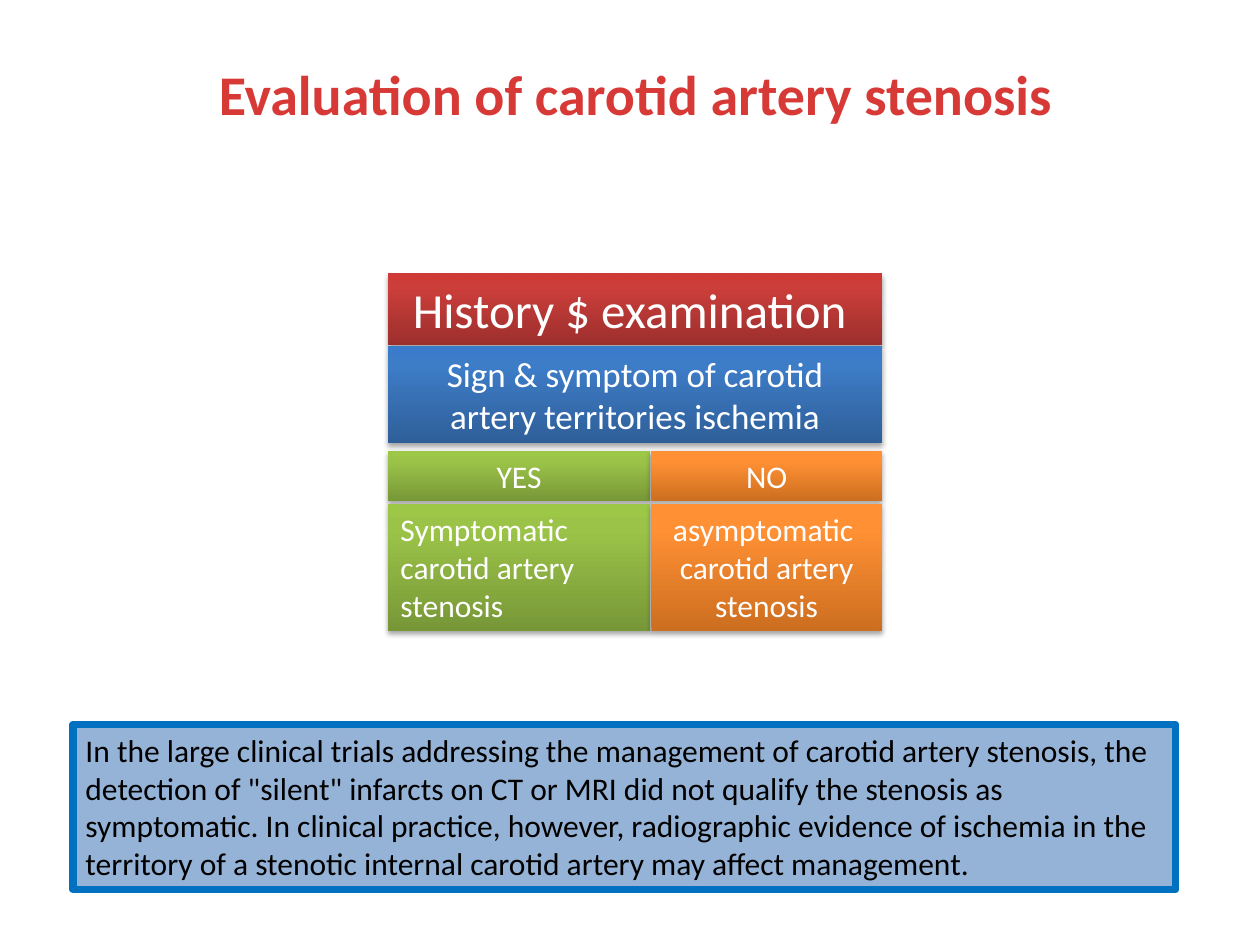
from copy import deepcopy

from lxml.etree import SubElement
from pptx import Presentation
from pptx.dml.color import RGBColor
from pptx.enum.shapes import MSO_SHAPE as Shape
from pptx.enum.text import MSO_ANCHOR as Anchor, PP_ALIGN as Align
from pptx.oxml.ns import qn
from pptx.util import Inches, Pt

WHITE = RGBColor(0xFF, 0xFF, 0xFF)
BLACK = RGBColor(0, 0, 0)
TITLE_RED = RGBColor(0xD7, 0x3A, 0x36)
NOTE_FILL = RGBColor(0x95, 0xB3, 0xD7)
NOTE_LINE = RGBColor(0x00, 0x70, 0xC0)

STOPS = (0, 0.8, 1)
RED = [RGBColor.from_string(c) for c in ("9C2F2D", "CB3E3A", "CE3B37")]
BLUE = [RGBColor.from_string(c) for c in ("2F5F99", "3D7CC7", "3A7CCB")]
GREEN = [RGBColor.from_string(c) for c in ("779737", "9BC348", "9DC746")]
ORANGE = [RGBColor.from_string(c) for c in ("CC6E20", "FF9034", "FF9136")]

NOTE = (
    "In the large clinical trials addressing the management of carotid artery "
    'stenosis, the detection of "silent" infarcts on CT or MRI did not qualify '
    "the stenosis as symptomatic. In clinical practice, however, radiographic "
    "evidence of ischemia in the territory of a stenotic internal carotid artery "
    "may affect management."
)


def write_text(shape, text, color, align=Align.CENTER, **font_format):
    frame = shape.text_frame
    frame.word_wrap = True
    frame.vertical_anchor = Anchor.TOP
    para = frame.paragraphs[0]
    para.alignment = align
    span = para.add_run()
    span.text = text
    span.font.color.rgb = color
    for name, value in {"name": "Calibri", **font_format}.items():
        setattr(span.font, name, value)


def add_box(page, left, top, width, height):
    box = page.shapes.add_shape(
        Shape.RECTANGLE, Inches(left), Inches(top), Inches(width), Inches(height))
    box.shadow.inherit = False
    return box


def fill_gradient(box, colors):
    """Fill from bottom to top with three colors."""
    box.fill.gradient()
    box.fill.gradient_angle = 90
    stop_list = box.fill._xPr.find(".//" + qn("a:gsLst"))
    stop_list.append(deepcopy(stop_list[0]))
    for stop, position, color in zip(box.fill.gradient_stops, STOPS, colors):
        stop.position = position
        stop.color.rgb = color


def add_soft_shadow(box):
    effects = box._element.spPr.find(qn("a:effectLst"))
    shadow = SubElement(effects, qn("a:outerShdw"), blurRad=str(Pt(3.1)),
                        dist=str(Pt(1.8)), dir="5400000", rotWithShape="0")
    black = SubElement(shadow, qn("a:srgbClr"), val="000000")
    SubElement(black, qn("a:alpha"), val="35000")


def add_title(page, left, top, width, height):
    title = page.shapes.add_textbox(
        Inches(left), Inches(top), Inches(width), Inches(height))
    write_text(title, "Evaluation of carotid artery stenosis", TITLE_RED,
               size=Pt(32), bold=True)


def add_decision_chart(page, left, top, width):
    """Stack the two steps, then the YES and NO columns side by side."""
    yes_width = 2.08
    no_left, no_width = yes_width + 0.01, width - yes_width - 0.01
    cells = [
        (0, 0, width, 0.57, RED, "History $ examination ", 28, Align.CENTER),
        (0, 0.58, width, 0.77, BLUE,
         "Sign & symptom of carotid artery territories ischemia", 20, Align.CENTER),
        (0, 1.41, yes_width, 0.4, GREEN, "YES", 18, Align.CENTER),
        (no_left, 1.41, no_width, 0.4, ORANGE, "NO", 18, Align.CENTER),
        (0, 1.83, yes_width, 1.01, GREEN,
         "Symptomatic  carotid artery stenosis", 18, Align.LEFT),
        (no_left, 1.83, no_width, 1.01, ORANGE,
         "asymptomatic  carotid artery stenosis", 18, Align.CENTER),
    ]
    for x, y, cell_width, height, colors, text, size, align in cells:
        box = add_box(page, left + x, top + y, cell_width, height)
        fill_gradient(box, colors)
        box.line.fill.background()
        add_soft_shadow(box)
        write_text(box, text, WHITE, align, size=Pt(size))


def add_note(page, left, top, width, height):
    box = add_box(page, left, top, width, height)
    box.fill.solid()
    box.fill.fore_color.rgb = NOTE_FILL
    box.line.color.rgb = NOTE_LINE
    box.line.width = Pt(4.5)
    write_text(box, NOTE, BLACK, Align.LEFT, size=Pt(18))


def main():
    deck = Presentation()
    deck.slide_width, deck.slide_height = Inches(10), Inches(7.5)
    page = deck.slides.add_slide(deck.slide_layouts[6])
    add_decision_chart(page, 3.08, 2.17, 3.92)
    add_note(page, 0.58, 5.75, 8.75, 1.31)
    add_title(page, 0.92, 0.42, 8.25, 0.64)
    deck.save("out.pptx")


if __name__ == "__main__":
    main()
